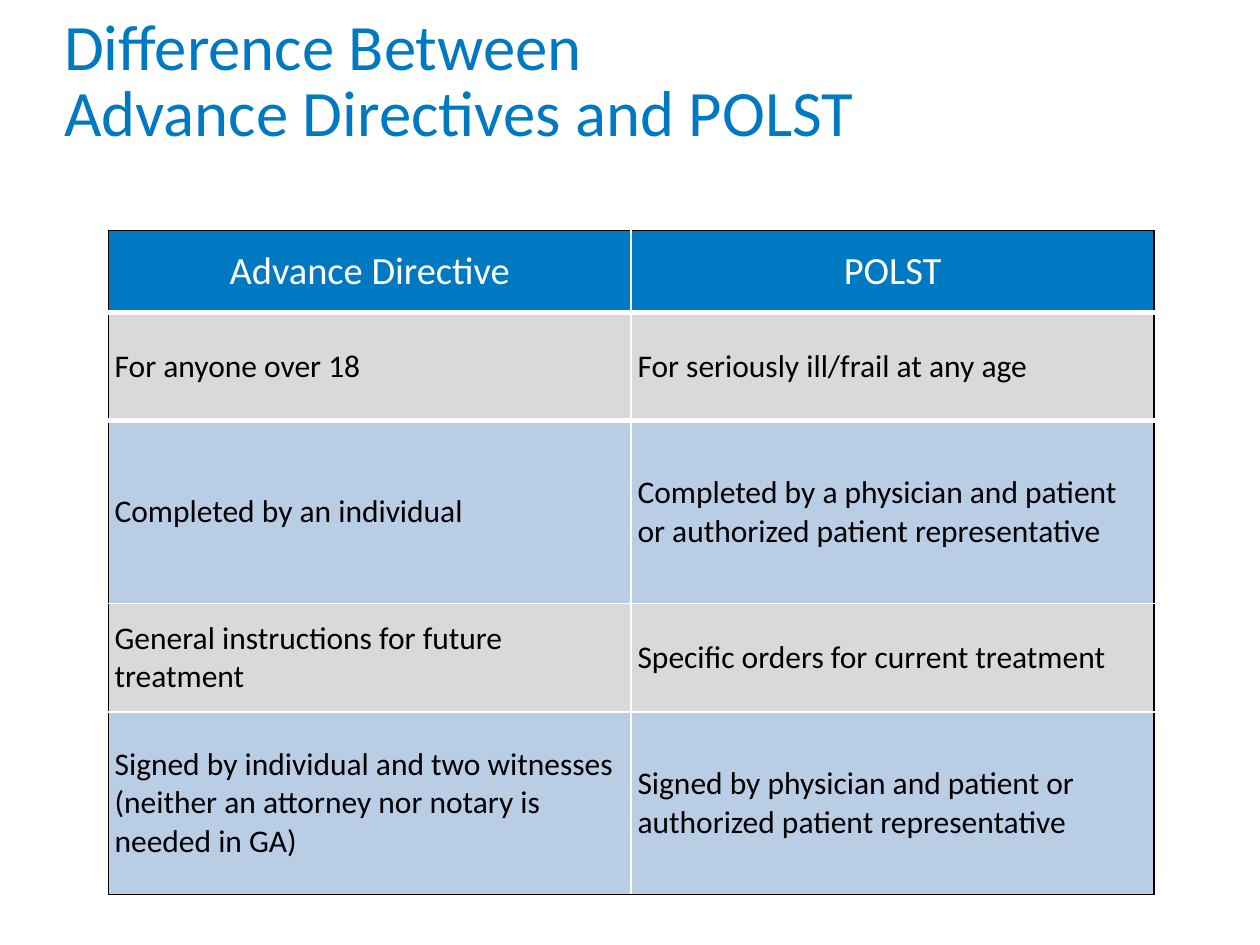
from lxml import etree
from pptx import Presentation
from pptx.dml.color import RGBColor
from pptx.enum.text import MSO_ANCHOR, PP_ALIGN
from pptx.oxml.ns import qn
from pptx.util import Inches, Pt

MIDDLE = MSO_ANCHOR.MIDDLE
LEFT, CENTER = PP_ALIGN.LEFT, PP_ALIGN.CENTER
BLUE, GRAY, PALE_BLUE = "0079C3", "D9D9D9", "B9CDE5"
BLACK, WHITE = "000000", "FFFFFF"
MARGINS = {f"margin_{side}": Inches(0.05) for side in ("left", "top", "right", "bottom")}

TITLE = "Difference Between\nAdvance Directives and POLST"
ROWS = [
    ("Advance Directive", "POLST"),
    ("For anyone over 18", "For seriously ill/frail at any age"),
    ("Completed by an individual",
     "Completed by a physician and patient or authorized patient representative"),
    ("General instructions for future treatment", "Specific orders for current treatment"),
    ("Signed by individual and two witnesses (neither an attorney nor notary is needed in GA)",
     "Signed by physician and patient or authorized patient representative"),
]
ROW_HEIGHTS = [0.65, 0.86, 1.45, 0.86, 1.45]
COLUMN_WIDTH = 4.15
RULES = [(BLACK, 1), (WHITE, 3), (WHITE, 3), (WHITE, 1), (WHITE, 1), (BLACK, 1)]


def color(value):
    return RGBColor.from_string(value)


def apply(target, values):
    for name, value in values.items():
        setattr(target, name, value)


def write(text_frame, text, size, text_color, paragraph_format):
    paragraph = text_frame.paragraphs[0]
    paragraph.text = text
    apply(paragraph, paragraph_format)
    for run in paragraph.runs:
        apply(run.font, {"name": "Calibri", "size": Pt(size)})
        run.font.color.rgb = color(text_color)


def add_title(slide):
    box = slide.shapes.add_textbox(Inches(0.46), Inches(0.04), Inches(9), Inches(1.25))
    apply(box.text_frame, {"word_wrap": True, "vertical_anchor": MIDDLE, **MARGINS})
    write(box.text_frame, TITLE, 37, BLUE, {"alignment": LEFT, "line_spacing": 0.85})


def add_border(cell, side, line_color, width):
    properties = cell._tc.get_or_add_tcPr()
    line = etree.SubElement(properties, qn(f"a:ln{side}"), w=str(Pt(width)))
    fill = etree.SubElement(line, qn("a:solidFill"))
    etree.SubElement(fill, qn("a:srgbClr"), val=line_color)


def format_cell(cell, text, row, column):
    header = row == 0
    apply(cell, {"vertical_anchor": MIDDLE, **MARGINS})
    add_border(cell, "L", WHITE if column else BLACK, 1)
    add_border(cell, "R", BLACK if column else WHITE, 1)
    add_border(cell, "T", *RULES[row])
    add_border(cell, "B", *RULES[row + 1])
    cell.fill.solid()
    cell.fill.fore_color.rgb = color(BLUE if header else GRAY if row % 2 else PALE_BLUE)
    write(cell.text_frame, text, 22 if header else 18, WHITE if header else BLACK,
          {"alignment": CENTER if header else LEFT})


def add_comparison_table(slide):
    frame = slide.shapes.add_table(len(ROWS), 2, Inches(0.86), Inches(1.83),
                                   Inches(2 * COLUMN_WIDTH), Inches(sum(ROW_HEIGHTS)))
    table = frame.table
    for column in table.columns:
        column.width = Inches(COLUMN_WIDTH)
    for row, (texts, height) in enumerate(zip(ROWS, ROW_HEIGHTS)):
        table.rows[row].height = Inches(height)
        for column, text in enumerate(texts):
            format_cell(table.cell(row, column), text, row, column)


def main():
    presentation = Presentation()
    apply(presentation, {"slide_width": Inches(10), "slide_height": Inches(7.5)})
    slide = presentation.slides.add_slide(presentation.slide_layouts[6])
    add_title(slide)
    add_comparison_table(slide)
    presentation.save("out.pptx")


if __name__ == "__main__":
    main()
